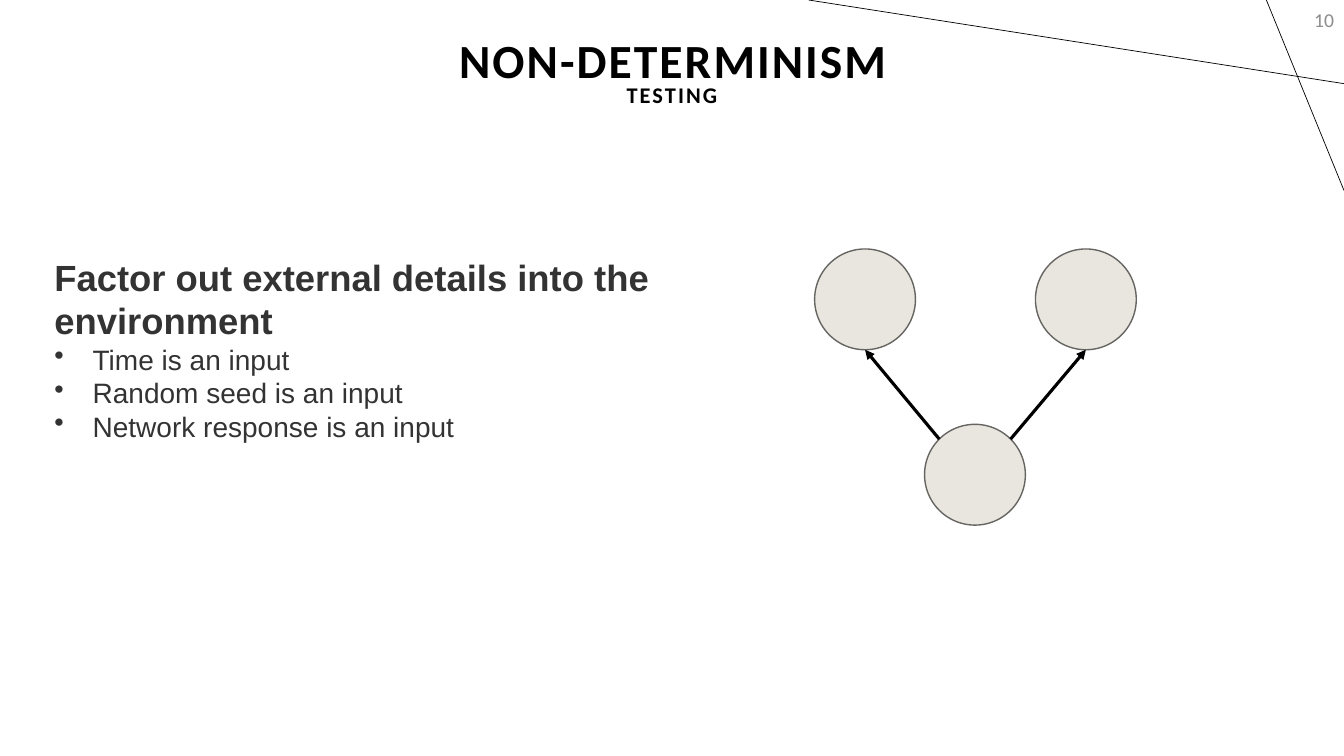
"""Build the slide on factoring non-determinism out into the environment."""
from dataclasses import dataclass
from math import sqrt

from lxml import etree
from pptx import Presentation
from pptx import util as u
from pptx.dml.color import RGBColor
from pptx.enum import shapes, text
from pptx.oxml.ns import qn

TITLE = "NON-DETERMINISM"
SUBTITLE = "TESTING"
PAGE_NUMBER = "10"
HEADING = "Factor out external details into the environment"
INPUTS = ["Time is an input", "Random seed is an input", "Network response is an input"]

WIDTH, HEIGHT = 13.33, 7.5
CORNER_LINES = [((WIDTH, 0.83), (8.02, 0)), ((12.56, 0), (WIDTH, 1.89))]
DIAMETER = 1.0
PROGRAM_CENTER = (9.67, 4.71)
INPUT_OFFSETS = [(-1.09, -1.74), (1.1, -1.74)]


@dataclass(frozen=True)
class Theme:
    """Colours, fonts and type sizes."""
    black: str = "000000"
    body: str = "333333"
    number: str = "8C8C8C"
    circle: str = "E9E6DF"
    outline: str = "666562"
    title_font: str = "Calibri"
    body_font: str = "Arial"
    title_size: int = 34
    subtitle_size: int = 16
    number_size: int = 14
    heading_size: int = 26
    bullet_size: int = 20


THEME = Theme()


def color(value):
    return RGBColor.from_string(value)


def style(paragraph, name, size, rgb, bold=False):
    font = paragraph.font
    font.name, font.size, font.bold = name, u.Pt(size), bold
    font.color.rgb = color(rgb)


def add_box(slide, left, top, width, height, anchor):
    box = slide.shapes.add_textbox(*map(u.Inches, (left, top, width, height)))
    frame = box.text_frame
    frame.word_wrap = True
    frame.vertical_anchor = anchor
    return frame


def add_label(slide, label, place, size, rgb, align, bold=False, spacing=0):
    frame = add_box(slide, *place, text.MSO_ANCHOR.MIDDLE)
    paragraph = frame.paragraphs[0]
    run = paragraph.add_run()
    run.text = label
    paragraph.alignment = align
    style(paragraph, THEME.title_font, size, rgb, bold)
    if spacing:
        paragraph.line_spacing = 0.9
        run.font._element.set("spc", str(int(spacing * 100)))


def add_bullet(frame, label):
    paragraph = frame.add_paragraph()
    paragraph.text = label
    style(paragraph, THEME.body_font, THEME.bullet_size, THEME.body)
    properties = paragraph._p.get_or_add_pPr()
    indent = u.Inches(0.38)
    properties.set("marL", str(indent))
    properties.set("indent", str(-indent))
    bullet = etree.Element(qn("a:buChar"), char="•")
    properties.find(qn("a:defRPr")).addprevious(bullet)


def add_line(slide, start, end, width, arrow=False):
    points = map(u.Inches, (*start, *end))
    line = slide.shapes.add_connector(shapes.MSO_CONNECTOR.STRAIGHT, *points)
    line.line.color.rgb = color(THEME.black)
    line.line.width = u.Pt(width)
    if arrow:
        etree.SubElement(line.line._get_or_add_ln(), qn("a:tailEnd"), type="triangle")
    etree.SubElement(line._element.spPr, qn("a:effectLst"))


def add_circle(slide, x, y):
    box = (x - DIAMETER / 2, y - DIAMETER / 2, DIAMETER, DIAMETER)
    circle = slide.shapes.add_shape(shapes.MSO_SHAPE.OVAL, *map(u.Inches, box))
    circle.shadow.inherit = False
    circle.fill.solid()
    circle.fill.fore_color.rgb = color(THEME.circle)
    circle.line.color.rgb = color(THEME.outline)
    circle.line.width = u.Pt(1)


def add_diagram(slide):
    x, y = PROGRAM_CENTER
    diagonal = DIAMETER / 2 / sqrt(2)
    add_circle(slide, x, y)
    for dx, dy in INPUT_OFFSETS:
        add_circle(slide, x + dx, y + dy)
        side = diagonal if dx > 0 else -diagonal
        start = (x + side, y - diagonal)
        add_line(slide, start, (x + dx, y + dy + DIAMETER / 2), 2.25, arrow=True)


def main():
    presentation = Presentation()
    presentation.slide_width, presentation.slide_height = u.Inches(WIDTH), u.Inches(HEIGHT)
    slide = presentation.slides.add_slide(presentation.slide_layouts[6])

    for start, end in CORNER_LINES:
        add_line(slide, start, end, 0.5)

    center, right = text.PP_ALIGN.CENTER, text.PP_ALIGN.RIGHT
    add_label(slide, TITLE, (0.02, -0.1, 13.31, 1.45), THEME.title_size,
              THEME.black, center, bold=True, spacing=1.5)
    add_label(slide, PAGE_NUMBER, (WIDTH - 3, 0, 3, 0.4), THEME.number_size,
              THEME.number, right)
    add_label(slide, SUBTITLE, (0.01, 0.23, 13.31, 1.45), THEME.subtitle_size,
              THEME.black, center, bold=True, spacing=1.5)

    frame = add_box(slide, 0.44, 2.48, 6.41, 1.99, text.MSO_ANCHOR.TOP)
    frame.auto_size = text.MSO_AUTO_SIZE.SHAPE_TO_FIT_TEXT
    heading = frame.paragraphs[0]
    heading.text = HEADING
    style(heading, THEME.body_font, THEME.heading_size, THEME.body, bold=True)
    for label in INPUTS:
        add_bullet(frame, label)

    add_diagram(slide)
    presentation.save("out.pptx")


if __name__ == "__main__":
    main()
